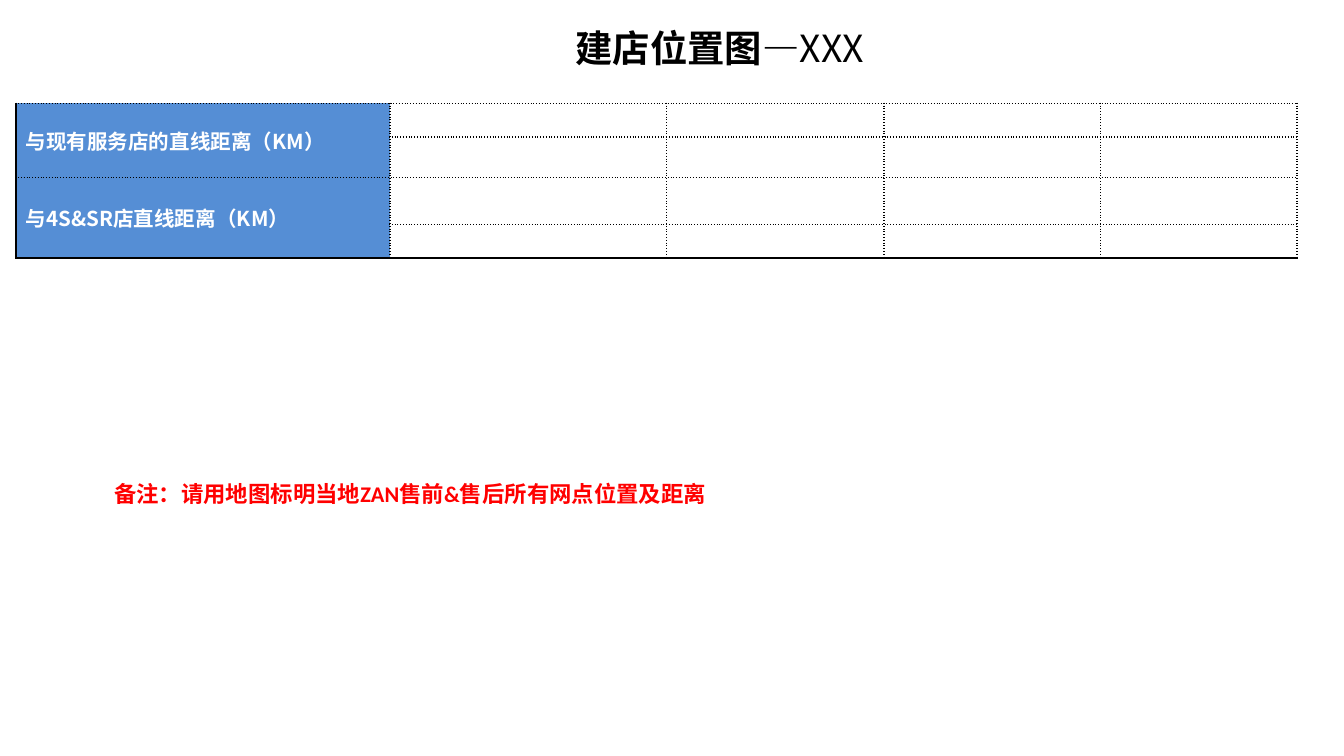
from lxml import etree
from pptx import Presentation
from pptx.dml.color import RGBColor
from pptx.enum.text import MSO_ANCHOR, PP_ALIGN
from pptx.oxml.ns import qn
from pptx.util import Inches, Pt

MIDDLE = MSO_ANCHOR.MIDDLE
LEFT = PP_ALIGN.LEFT
CENTER = PP_ALIGN.CENTER

WIDTH = 10
HEIGHT = WIDTH * 9 / 16
CJK_FONT = "Noto Sans CJK SC"
BLACK, WHITE, RED, BLUE = "000000", "FFFFFF", "FF0000", "558ED5"
COLUMN_WIDTHS = [2.78, 2.06, 1.62, 1.61, 1.46]
ROW_HEIGHTS = [0.25, 0.3, 0.35, 0.25]
ROWS_PER_LABEL = 2
LABELS = ["与现有服务店的直线距离（KM）", "与4S&SR店直线距离（KM）"]


def color(value):
    return RGBColor.from_string(value)


def add_text(paragraph, text, font=CJK_FONT, size=11, fill=BLACK, bold=True, align=LEFT):
    paragraph.alignment = align
    run = paragraph.add_run()
    run.text = text
    run.font.name = font
    run.font.size = Pt(size)
    run.font.bold = bold
    run.font.color.rgb = color(fill)
    east_asian = etree.SubElement(run.font._element, qn("a:ea"))
    east_asian.set("typeface", CJK_FONT)


def add_text_box(slide, left, top, width, height):
    shape = slide.shapes.add_textbox(
        Inches(left * WIDTH), Inches(top * HEIGHT),
        Inches(width * WIDTH), Inches(height * HEIGHT))
    shape.text_frame.word_wrap = True
    return shape.text_frame.paragraphs[0]


def set_borders(cell, solid_sides):
    properties = cell._tc.get_or_add_tcPr()
    for side in "LRTB":
        line = etree.SubElement(properties, qn(f"a:ln{side}"), w=str(Pt(1)))
        fill = etree.SubElement(line, qn("a:solidFill"))
        etree.SubElement(fill, qn("a:srgbClr"), val=BLACK)
        dash = "solid" if side in solid_sides else "sysDot"
        etree.SubElement(line, qn("a:prstDash"), val=dash)


def format_cell(cell, is_label, solid_sides):
    set_borders(cell, solid_sides)
    cell.margin_left = cell.margin_right = Inches(0.07)
    cell.margin_top = cell.margin_bottom = 0
    cell.vertical_anchor = MIDDLE
    if is_label:
        cell.fill.solid()
        cell.fill.fore_color.rgb = color(BLUE)
    else:
        cell.fill.background()
    end_properties = etree.SubElement(
        cell.text_frame.paragraphs[0]._p, qn("a:endParaRPr"))
    end_properties.set("sz", "1100")


def add_distance_table(slide):
    table = slide.shapes.add_table(
        len(ROW_HEIGHTS), len(COLUMN_WIDTHS), Inches(0.12), Inches(0.77),
        Inches(sum(COLUMN_WIDTHS)), Inches(sum(ROW_HEIGHTS))).table
    table.first_row = table.horz_banding = False
    for column, width in zip(table.columns, COLUMN_WIDTHS):
        column.width = Inches(width)
    last_row = len(ROW_HEIGHTS) - 1
    for row_index, height in enumerate(ROW_HEIGHTS):
        table.rows[row_index].height = Inches(height)
        for column_index in range(len(COLUMN_WIDTHS)):
            is_label = column_index == 0
            label_end = row_index + ROWS_PER_LABEL - 1 if is_label else row_index
            solid_sides = ("L" if is_label else "") + ("B" if label_end >= last_row else "")
            format_cell(table.cell(row_index, column_index), is_label, solid_sides)
    for index, label in enumerate(LABELS):
        first_row = index * ROWS_PER_LABEL
        cell = table.cell(first_row, 0)
        cell.merge(table.cell(first_row + ROWS_PER_LABEL - 1, 0))
        add_text(cell.text_frame.paragraphs[0], label, fill=WHITE)


def main():
    presentation = Presentation()
    presentation.slide_width = Inches(WIDTH)
    presentation.slide_height = Inches(HEIGHT)
    slide = presentation.slides.add_slide(presentation.slide_layouts[6])
    add_distance_table(slide)
    title = add_text_box(slide, 0.303, 0.025, 0.465, 0.075)
    add_text(title, "建店位置图—", size=20, align=CENTER)
    add_text(title, "XXX", size=20, bold=False, align=CENTER)
    note = add_text_box(slide, 0.075, 0.626, 0.512, 0.053)
    add_text(note, "备注：请用地图标明当地ZAN售前&售后所有网点位置及距离",
             font="Calibri", size=12, fill=RED)
    presentation.save("out.pptx")


if __name__ == "__main__":
    main()
